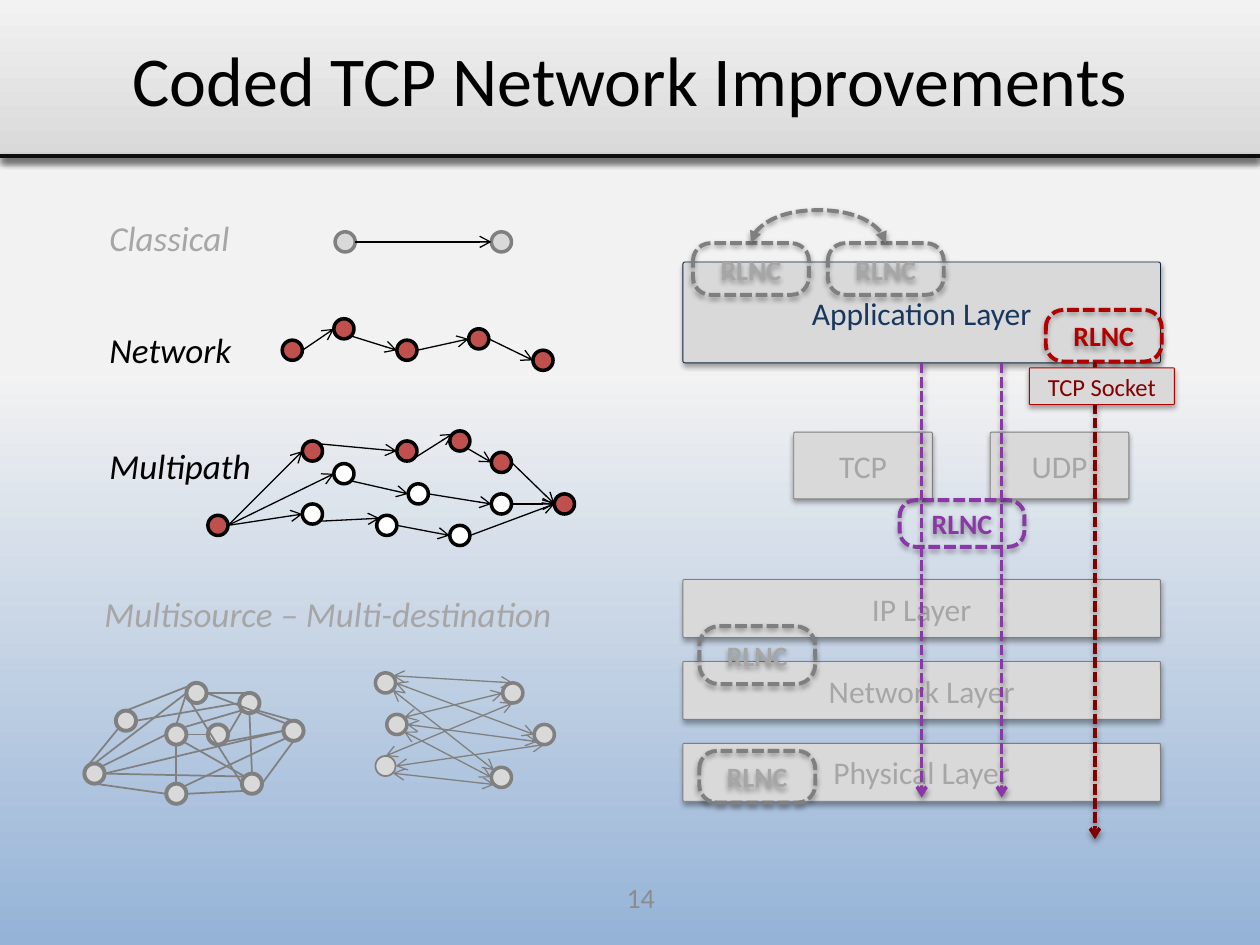
from lxml import etree
from pptx import Presentation, util as u
from pptx.dml.color import RGBColor
from pptx.enum import dml, shapes, text
from pptx.oxml.ns import qn

BLACK = RGBColor(0x00, 0x00, 0x00)
WHITE = RGBColor(0xFF, 0xFF, 0xFF)
INK = RGBColor(0x0D, 0x0D, 0x0D)
PALE = RGBColor(0xF2, 0xF2, 0xF2)
LIGHT = RGBColor(0xD9, 0xD9, 0xD9)
MUTED = RGBColor(0xA6, 0xA6, 0xA6)
NUMBER = RGBColor(0x8C, 0x8C, 0x8C)
GREY = RGBColor(0x80, 0x80, 0x80)
EDGE = RGBColor(0x7F, 0x7F, 0x7F)
SKY = RGBColor(0x95, 0xB3, 0xD7)
NAVY = RGBColor(0x0F, 0x24, 0x3E)
BLUE = RGBColor(0x17, 0x37, 0x5E)
BRICK = RGBColor(0xC0, 0x50, 0x4D)
RED = RGBColor(0xB0, 0x00, 0x00)
MAROON = RGBColor(0x80, 0x00, 0x00)
WINE = RGBColor(0x85, 0x00, 0x00)
PURPLE = RGBColor(0x89, 0x38, 0xA6)

RADIUS = 0.08
DIAGONAL = RADIUS * 0.71
STEP = {"n": (0, -RADIUS), "s": (0, RADIUS), "e": (RADIUS, 0), "w": (-RADIUS, 0),
        "ne": (DIAGONAL, -DIAGONAL), "nw": (-DIAGONAL, -DIAGONAL),
        "se": (DIAGONAL, DIAGONAL), "sw": (-DIAGONAL, DIAGONAL)}


def cm(inches):
    """Turn inches into a Cm length."""
    return u.Cm(2.54 * inches)


class Deck:
    """Hold the style and the current slide."""

    font = "Calibri"

    def __init__(self, prs):
        self.s = prs.slides.add_slide(prs.slide_layouts[6])

    def shadow(self, sp, alpha, blur, dist):
        pr = sp._element.spPr
        for old in pr.findall(qn("a:effectLst")):
            pr.remove(old)
        effects = etree.SubElement(pr, qn("a:effectLst"))
        if alpha:
            outer = etree.SubElement(effects, qn("a:outerShdw"), blurRad=str(u.Pt(blur)),
                                     dist=str(u.Pt(dist)), dir="5400000", rotWithShape="0")
            color = etree.SubElement(outer, qn("a:srgbClr"), val="000000")
            etree.SubElement(color, qn("a:alpha"), val=str(alpha * 1000))

    def label(self, sp, words, size, color, bold=False, italic=False, center=True):
        tf = sp.text_frame
        tf.text = words
        p = tf.paragraphs[0]
        p.alignment = text.PP_ALIGN.CENTER if center else text.PP_ALIGN.LEFT
        f = p.runs[0].font
        f.name, f.size, f.bold, f.italic = self.font, u.Pt(size), bold, italic
        f.color.rgb = color

    def text(self, x, y, w, h, words, size, color, italic=False, center=False):
        sp = self.s.shapes.add_textbox(cm(x), cm(y), cm(w), cm(h))
        sp.text_frame.word_wrap = center
        if center:
            sp.text_frame.vertical_anchor = text.MSO_ANCHOR.MIDDLE
        self.label(sp, words, size, color, italic=italic, center=center)

    def band(self, h, bottom, top, end):
        sp = self.s.shapes.add_shape(shapes.MSO_SHAPE.RECTANGLE, 0, 0, cm(10), cm(h))
        sp.fill.gradient()
        sp.fill.gradient_angle = 90
        for stop, color, place in zip(sp.fill.gradient_stops, (bottom, top), (0, end)):
            stop.color.rgb, stop.position = color, place
        sp.line.fill.background()
        self.shadow(sp, 40, 4, 3)

    def box(self, x, y, w, h, words, line=EDGE, color=MUTED, size=18, badge=False):
        sp = self.s.shapes.add_shape(shapes.MSO_SHAPE.ROUNDED_RECTANGLE,
                                     cm(x), cm(y), cm(w), cm(h))
        sp.adjustments[0] = 0.34 if badge else 0.02
        sp.line.color.rgb = line
        sp.line.width = u.Pt(2.25 if badge else 0.5)
        if badge:
            sp.fill.background()
            sp.line.dash_style = dml.MSO_LINE.SQUARE_DOT
        else:
            sp.fill.solid()
            sp.fill.fore_color.rgb = LIGHT
        self.shadow(sp, 35, 3.1, 1.8)
        sp.text_frame.vertical_anchor = text.MSO_ANCHOR.MIDDLE
        self.label(sp, words, size, color, bold=badge)
        return sp

    def badge(self, x, y, h=0.41, w=0.92, line=EDGE, color=MUTED):
        return self.box(x, y, w, h, "RLNC", line, color, 16, badge=True)

    def node(self, x, y, fill, line, width):
        sp = self.s.shapes.add_shape(shapes.MSO_SHAPE.OVAL, cm(x - RADIUS), cm(y - RADIUS),
                                     cm(2 * RADIUS), cm(2 * RADIUS))
        sp.fill.solid()
        sp.fill.fore_color.rgb = fill
        sp.line.color.rgb, sp.line.width = line, u.Pt(width)
        sp.shadow.inherit = False

    def line(self, start, stop, color, width, head=None, tail=None, dash=False,
             alpha=0, kind=shapes.MSO_CONNECTOR.STRAIGHT):
        sp = self.s.shapes.add_connector(kind, *map(cm, (*start, *stop)))
        sp.line.color.rgb, sp.line.width = color, u.Pt(width)
        if dash:
            sp.line.dash_style = dml.MSO_LINE.SQUARE_DOT
        ln = sp._element.spPr.find(qn("a:ln"))
        for tag, end in (("a:headEnd", head), ("a:tailEnd", tail)):
            if end:
                etree.SubElement(ln, qn(tag), type=end)
        self.shadow(sp, alpha, 3.1, 1.6)
        return sp

    def arc(self, start, stop, rise):
        sp = self.line(start, stop, EDGE, 2.25, "triangle", "triangle", True, 38,
                       shapes.MSO_CONNECTOR.CURVE)
        span, thin = stop[0] - start[0], u.Cm(0.01)
        sp.width, sp.height = thin, cm(span)
        sp.left = cm((start[0] + stop[0]) / 2) - thin // 2
        sp.top = cm(start[1] - span / 2)
        xfrm = sp._element.spPr.find(qn("a:xfrm"))
        xfrm.set("rot", "16200000")
        xfrm.set("flipH", "1")
        geom = sp._element.spPr.find(qn("a:prstGeom"))
        guides = geom.find(qn("a:avLst"))
        if guides is None:
            guides = etree.SubElement(geom, qn("a:avLst"))
        etree.SubElement(guides, qn("a:gd"), name="adj1",
                         fmla=f"val {-round(cm(rise) / thin * 100000)}")

    def graph(self, nodes, links, fill, line, width=2, link=0.75, color=BLACK,
              head=None, tail="arrow", hollow="", thin=""):
        for name, (x, y) in nodes.items():
            self.node(x, y, WHITE if name in hollow else fill, line,
                      1 if name in thin else width)
        for pair in links.split():
            ends = [(nodes[end[0]][0] + STEP[end[1:]][0], nodes[end[0]][1] + STEP[end[1:]][1])
                    for end in pair.split("-")]
            self.line(*ends, color, link, head, tail)


def main():
    prs = Presentation()
    prs.slide_width, prs.slide_height = cm(10), cm(7.5)
    d = Deck(prs)
    d.band(7.5, SKY, PALE, 0.61)
    d.band(1.25, LIGHT, PALE, 1)
    d.line((0, 1.24), (10, 1.24), INK, 2, alpha=38)
    d.text(0, 0, 10, 1.25, "Coded TCP Network Improvements", 40, BLACK, center=True)
    d.text(3.92, 6.92, 2.33, 0.4, "14", 16, NUMBER, center=True)

    for x, y, w, words, color in (
            (0.77, 1.67, 1.23, "Classical", MUTED), (0.77, 2.56, 1.25, "Network", BLACK),
            (0.77, 3.48, 1.4, "Multipath", BLACK),
            (0.73, 4.65, 3.85, "Multisource – Multi-destination", MUTED)):
        d.text(x, y, w, 0.44, words, 20, color, italic=True)

    d.graph({"A": (2.74, 1.92), "B": (3.98, 1.92)}, "Ae-Bw", LIGHT, GREY)
    d.graph({"P": (3.06, 5.42), "Q": (3.15, 5.75), "R": (3.06, 6.08),
             "X": (4.07, 5.5), "Y": (4.32, 5.83), "Z": (3.98, 6.17)},
            "Pe-Yw Qe-Ysw Qse-Zw Rn-Xs Qne-Xw Pse-Znw Re-Ys Rse-Zsw Pne-Xn",
            LIGHT, GREY, color=GREY, head="arrow", thin="R")
    d.graph({"A": (1.4, 5.83), "B": (0.75, 6.14), "C": (1.73, 5.83), "D": (1, 5.72),
             "E": (1.98, 5.58), "F": (1.4, 6.3), "G": (1.56, 5.5), "H": (2.33, 5.8),
             "I": (2, 6.22)},
            "Be-Hw Ge-Hnw Ge-En Gsw-Iw Ie-Hs Hsw-Fne Dn-Gnw De-Ew Dsw-Bnw Bn-Gw Bne-Aw "
            "Gw-An Ae-Cw Ane-Esw Ese-Hn Fe-Isw Bs-Fw Be-Inw As-Fn Ase-Inw In-Es Esw-Ce "
            "Cse-Hw", LIGHT, GREY, 2.25, 1, GREY, tail=None)

    app = d.box(5.42, 2.08, 3.79, 0.8, "Application Layer", NAVY, BLUE)
    for i, words in enumerate(("IP Layer", "Network Layer", "Physical Layer")):
        d.box(5.42, 4.6 + 0.65 * i, 3.79, 0.46, words)
    for x, words in ((7.86, "UDP"), (6.3, "TCP")):
        d.box(x, 3.43, 1.1, 0.53, words)
    d.badge(5.55, 4.97, 0.46)
    d.badge(8.3, 2.46, line=RED, color=RED)
    for x, y in ((5.5, 1.93), (6.57, 1.93), (5.55, 5.96)):
        d.badge(x, y)
    d.arc((5.96, 1.93), (7.03, 1.93), 0.26)
    d.line((8.69, 2.87), (8.69, 6.66), MAROON, 2, tail="arrow", dash=True, alpha=38)
    d.box(8.17, 2.92, 1.15, 0.29, "TCP Socket", RED, WINE, 14)

    d.graph({"A": (2.32, 2.78), "B": (2.73, 2.61), "C": (3.23, 2.78), "D": (3.8, 2.69),
             "E": (4.31, 2.86)}, "Ae-Bw Bse-Cw Ce-Dw De-Ew", BRICK, BLACK)
    d.graph({"S": (1.73, 4.17), "A": (2.48, 3.58), "B": (3.23, 3.58), "C": (3.65, 3.5),
             "D": (3.98, 3.67), "E": (2.73, 3.76), "F": (3.32, 3.92), "G": (3.98, 4),
             "H": (2.48, 4.08), "I": (3.07, 4.17), "J": (3.65, 4.25), "T": (4.48, 4)},
            "Se-Aw Se-Ew Se-Hw Ane-Bw Bse-Cnw Cse-Dw De-Tw Ese-Fw Fe-Gw Ge-Tw Hse-Inw "
            "Ie-Jw Je-Tw", BRICK, BLACK, hollow="EFGHIJ")

    d.badge(7.14, 3.97, 0.37, 0.99, PURPLE, PURPLE)
    for x in (7.95, 7.31):
        sp = d.line((x, 2.88), (x, 6.33), PURPLE, 2, tail="arrow", dash=True, alpha=38)
    sp.begin_connect(app, 2)
    sp.end_x = sp.begin_x
    prs.save("out.pptx")


if __name__ == "__main__":
    main()
